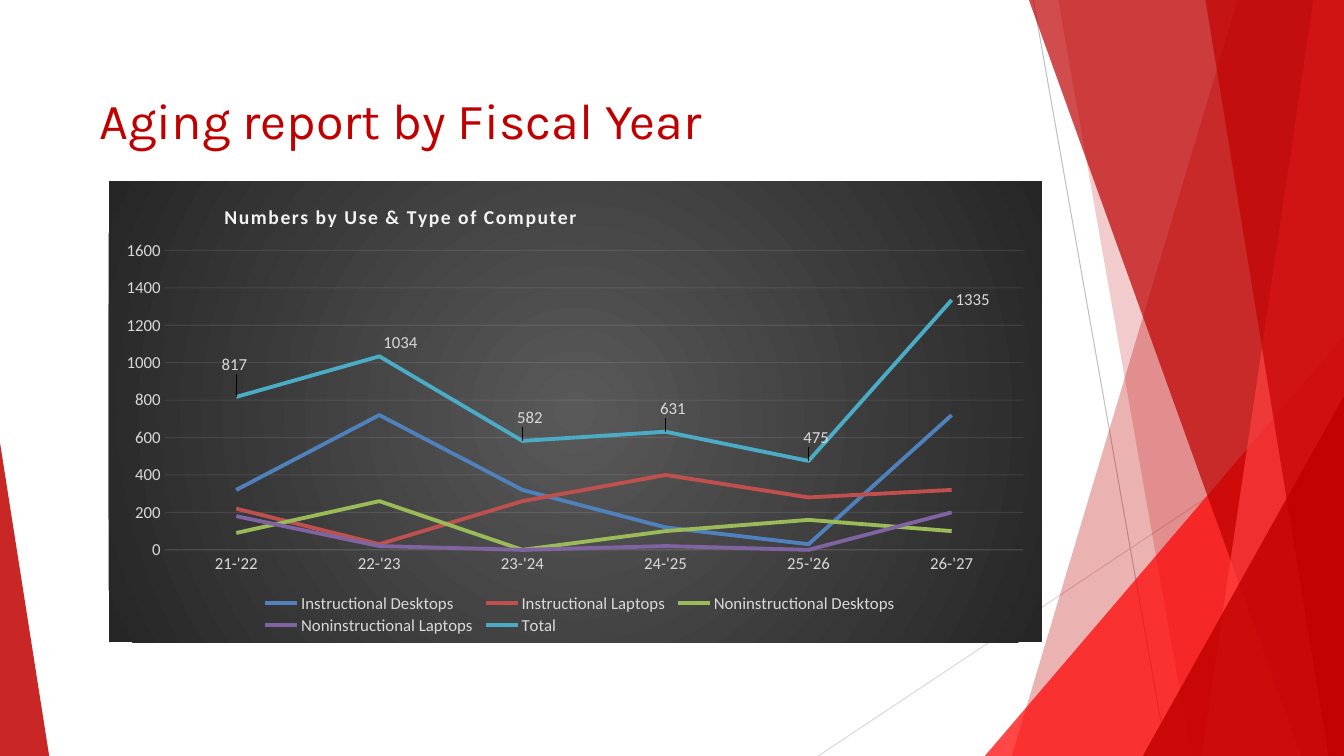
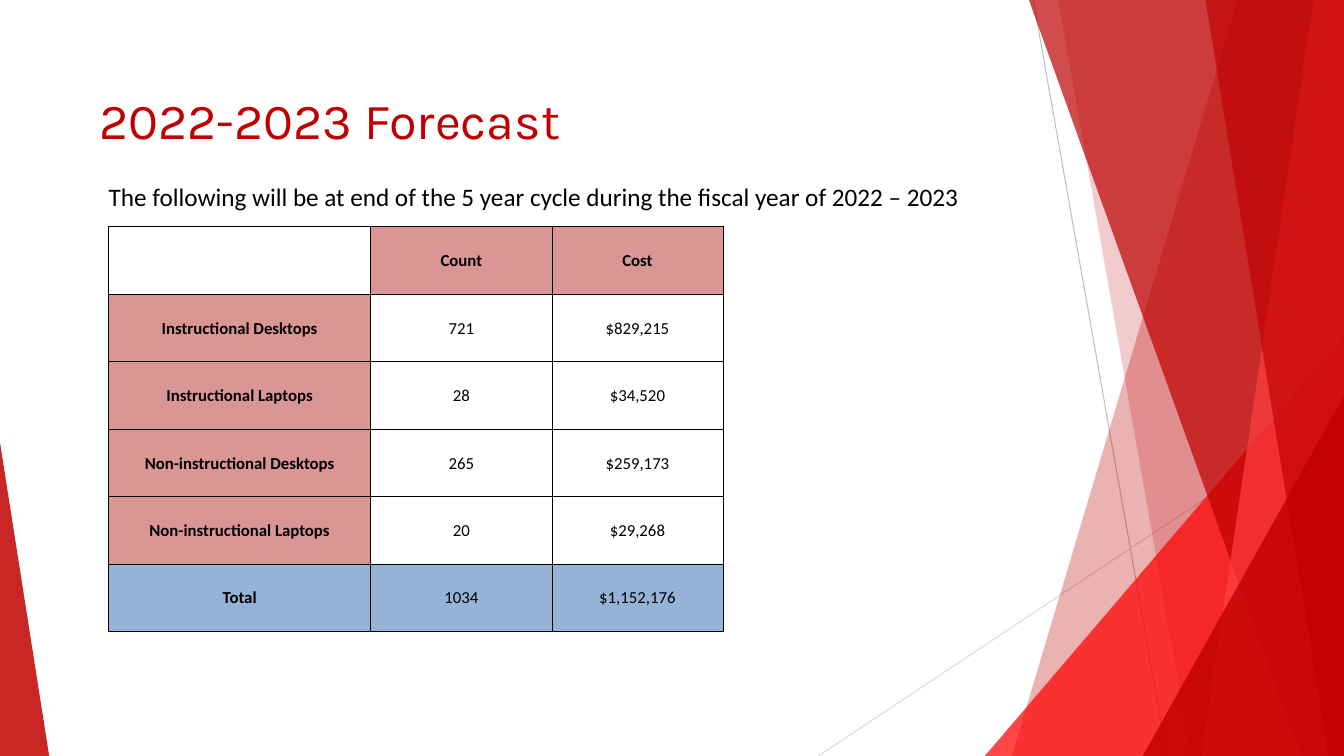
from dataclasses import dataclass

from lxml import etree
from pptx import Presentation
from pptx import util as u
from pptx.chart.data import CategoryChartData
from pptx.dml.color import RGBColor
from pptx.enum import chart as charts, text
from pptx.oxml import parse_xml
from pptx.oxml.ns import nsdecls, qn


@dataclass(frozen=True)
class Theme:
    red: str = "C00000"
    deep_red: str = "BE0000"
    bright_red: str = "FF0000"
    coral: str = "FF4040"
    rule_dark: str = "BEBEBE"
    rule_light: str = "D9D9D9"
    ink: str = "000000"
    header_fill: str = "D99694"
    total_fill: str = "95B3D7"
    chart_center: str = "595959"
    chart_edge: str = "262626"
    chart_text: str = "D9D9D9"
    chart_light: str = "F2F2F2"
    title_font: str = "Karla"
    body_font: str = "Calibri"
    title_size: int = 36
    body_size: int = 18
    chart_title_size: int = 14
    small_size: int = 12


theme = Theme()
WIDTH, HEIGHT = 33.87, 19.05


def set_font(font, color, size=theme.small_size, name=theme.body_font, bold=False):
    font.name = name
    font.size = u.Pt(size)
    font.bold = bold
    font.color.rgb = RGBColor.from_string(color)


def place(owner, index, values, edge=True):
    for old in owner.findall(qn("c:layout")):
        owner.remove(old)
    layout = parse_xml(f"<c:layout {nsdecls('c')}><c:manualLayout/></c:layout>")
    fields = {"xMode": "edge", "yMode": "edge"} if edge else {}
    if owner.tag == qn("c:plotArea"):
        fields = {"layoutTarget": "inner"} | fields
    fields |= dict(zip("xywh", values))
    for field, value in fields.items():
        etree.SubElement(layout[0], qn(f"c:{field}"), val=str(value))
    owner.insert(index, layout)


deck = Presentation()
deck.slide_width, deck.slide_height = u.Cm(WIDTH), u.Cm(HEIGHT)
blank = deck.slide_layouts[6]
chart_page, table_page = [deck.slides.add_slide(blank) for _ in range(2)]

rules = [
    (26.04, 0, 29.41, HEIGHT, theme.rule_dark),
    (WIDTH, 10.24, 20.62, HEIGHT, theme.rule_light),
]
corner = (WIDTH, HEIGHT)
bands = [
    ([(WIDTH, 0), (31.19, 0), (25.5, HEIGHT), corner], theme.red, 30),
    ([(WIDTH, 0), (26.67, 0), (30.02, HEIGHT), corner], theme.red, 20),
    ([(WIDTH, 8.46), (24.82, HEIGHT), corner], theme.bright_red, 72),
    ([(WIDTH, 0), (25.93, 0), (32.79, HEIGHT), corner], theme.deep_red, 70),
    ([(WIDTH, 0), (33.1, 0), (30.28, HEIGHT), corner], theme.coral, 70),
    ([(WIDTH, 0), (30.38, 0), (33.48, HEIGHT), corner], theme.red, 65),
    ([(WIDTH, 9.98), (28.8, HEIGHT), corner], theme.red, 80),
    ([(0, 11.15), (0, HEIGHT), (1.24, HEIGHT)], theme.red, 85),
]
backdrop = []
for x1, y1, x2, y2, color in rules:
    rule = chart_page.shapes.add_connector(1, u.Cm(x1), u.Cm(y1), u.Cm(x2), u.Cm(y2))
    rule.line.color.rgb = RGBColor.from_string(color)
    rule.line.width = u.Pt(0.72)
    etree.SubElement(rule.element.spPr, qn("a:effectLst"))
    backdrop.append(rule)
for points, color, opacity in bands:
    corners = [(u.Cm(x), u.Cm(y)) for x, y in points]
    builder = chart_page.shapes.build_freeform(*corners[0])
    builder.add_line_segments(corners[1:], close=True)
    band = builder.convert_to_shape()
    band.shadow.inherit = False
    band.line.fill.background()
    band.fill.solid()
    band.fill.fore_color.rgb = RGBColor.from_string(color)
    tint = band.element.spPr.find(".//" + qn("a:srgbClr"))
    etree.SubElement(tint, qn("a:alpha"), val=str(opacity * 1000))
    backdrop.append(band)
for shape in backdrop:
    blank.shapes.element.append(shape.element)

title_style = (2.51, 2.16, 28.83, 1.6, theme.red, theme.title_size, theme.title_font)
body_style = (2.74, 4.57, 23.47, 0.76, theme.ink, theme.body_size, theme.body_font)
texts = [
    (chart_page, "Aging report by Fiscal Year", title_style),
    (table_page, "2022-2023 Forecast", title_style),
    (
        table_page,
        "The following will be at end of the 5 year cycle during the fiscal year of 2022 – 2023",
        body_style,
    ),
]
for page, words, (left, top, width, height, color, size, name) in texts:
    box = page.shapes.add_textbox(u.Cm(left), u.Cm(top), u.Cm(width), u.Cm(height))
    frame = box.text_frame
    frame.word_wrap = True
    frame.vertical_anchor = text.MSO_ANCHOR.BOTTOM
    frame.margin_left = frame.margin_right = frame.margin_top = frame.margin_bottom = 0
    frame.text = words
    set_font(frame.paragraphs[0].font, color, size, name)

series_rows = [
    ("Instructional Desktops", (320, 720, 320, 120, 30, 720), "4F81BD"),
    ("Instructional Laptops", (220, 30, 260, 400, 280, 320), "C0504D"),
    ("Noninstructional Desktops", (90, 260, 0, 100, 160, 100), "9BBB59"),
    ("Noninstructional Laptops", (180, 20, 0, 20, 0, 200), "8064A2"),
    ("Total", (817, 1034, 582, 631, 475, 1335), "4BACC6"),
]
data = CategoryChartData(number_format="0")
data.categories = [f"{year}-'{year + 1}" for year in range(21, 27)]
for name, values, color in series_rows:
    data.add_series(name, values)
chart = chart_page.shapes.add_chart(
    charts.XL_CHART_TYPE.LINE, u.Cm(2.74), u.Cm(4.57), u.Cm(23.52), u.Cm(11.61), data
).chart
set_font(chart.font, theme.chart_text)
chart.plots[0].vary_by_categories = False
for series, (name, values, color) in zip(chart.plots[0].series, series_rows):
    series.smooth = False
    series.marker.style = charts.XL_MARKER_STYLE.NONE
    series.format.line.width = u.Pt(2.75)
    series.format.line.color.rgb = RGBColor.from_string(color)

total = chart.plots[0].series[4]
labels = total.data_labels
labels.show_value = True
labels.number_format = "0"
labels.number_format_is_linked = False
labels.position = charts.XL_LABEL_POSITION.RIGHT
set_font(labels.font, theme.chart_text)
label_shifts = [(-0.02, -0.07), (0, -0.03), (-0.01, -0.05), (-0.01, -0.05), (-0.01, -0.05)]
for index in range(len(label_shifts)):
    label = total.points[index].data_label
    label.position = charts.XL_LABEL_POSITION.RIGHT
    set_font(label.font, theme.chart_text)
for label, shift in zip(chart.element.xpath(".//c:dLbl"), label_shifts):
    place(label, 1, shift, edge=False)

category_axis, value_axis = chart.category_axis, chart.value_axis
value_axis.minimum_scale, value_axis.maximum_scale, value_axis.major_unit = 0, 1600, 200
value_axis.has_major_gridlines = True
value_axis.format.line.fill.background()
value_axis.tick_labels.number_format = "0"
value_axis.tick_labels.number_format_is_linked = False
for part in (category_axis, value_axis.major_gridlines):
    part.format.line.width = u.Pt(0.75)
    part.format.line.color.rgb = RGBColor.from_string(theme.chart_light)
for tint in chart.element.xpath(".//c:catAx/c:spPr//a:srgbClr | .//c:majorGridlines//a:srgbClr"):
    etree.SubElement(tint, qn("a:alpha"), val="10000")
for axis in (category_axis, value_axis):
    axis.major_tick_mark = axis.minor_tick_mark = charts.XL_TICK_MARK.NONE
    set_font(axis.tick_labels.font, theme.chart_text)

chart.has_title = True
span = chart.chart_title.text_frame.paragraphs[0].add_run()
span.text = "Numbers by Use & Type of Computer"
set_font(span.font, theme.chart_light, theme.chart_title_size, bold=True)
chart.element.xpath(".//c:title//a:rPr")[0].set("spc", "100")
chart.has_legend = True
chart.legend.position = charts.XL_LEGEND_POSITION.BOTTOM
chart.legend.include_in_layout = False
set_font(chart.legend.font, theme.chart_text)

plot_area = chart.element.xpath(".//c:plotArea")[0]
place(chart.element.xpath(".//c:title")[0], 1, (0.12, 0.04))
place(plot_area, 0, (0.06, 0.15, 0.92, 0.65))
place(chart.element.xpath(".//c:legend")[0], 1, (0.16, 0.89, 0.69, 0.1))
plot_area.append(parse_xml(f"<c:spPr {nsdecls('c', 'a')}><a:noFill/></c:spPr>"))
chart.element.xpath("c:chart")[0].addnext(parse_xml(
    f"<c:spPr {nsdecls('c', 'a')}><a:gradFill><a:gsLst>"
    f'<a:gs pos="0"><a:srgbClr val="{theme.chart_center}"/></a:gs>'
    f'<a:gs pos="100000"><a:srgbClr val="{theme.chart_edge}"/></a:gs></a:gsLst>'
    '<a:path path="circle"><a:fillToRect l="50000" t="50000" r="50000" b="50000"/></a:path>'
    "</a:gradFill><a:ln><a:noFill/></a:ln></c:spPr>"
))

forecast = [
    ("", "Count", "Cost"),
    ("Instructional Desktops", "721", "$829,215"),
    ("Instructional Laptops", "28", "$34,520"),
    ("Non-instructional Desktops", "265", "$259,173"),
    ("Non-instructional Laptops", "20", "$29,268"),
    ("Total", "1034", "$1,152,176"),
]
column_widths = (6.6, 4.57, 4.31)
row_height = 1.7
table = table_page.shapes.add_table(
    len(forecast), len(column_widths), u.Cm(2.74), u.Cm(5.71),
    u.Cm(sum(column_widths)), u.Cm(row_height * len(forecast)),
).table
table.first_row = table.horz_banding = False
for column, width in zip(table.columns, column_widths):
    column.width = u.Cm(width)
for row_index, row in enumerate(forecast):
    table.rows[row_index].height = u.Cm(row_height)
    for column_index, words in enumerate(row):
        cell = table.cell(row_index, column_index)
        heading = row_index == 0 or column_index == 0
        cell.text = words
        cell.vertical_anchor = text.MSO_ANCHOR.MIDDLE
        cell.margin_left = cell.margin_right = cell.margin_top = u.Cm(0.03)
        cell.margin_bottom = 0
        para = cell.text_frame.paragraphs[0]
        para.alignment = text.PP_ALIGN.CENTER
        set_font(para.font, theme.ink, bold=heading)
        for side in "LRTB":
            cell.fill.background()
            border = parse_xml(
                f'<a:ln{side} {nsdecls("a")} w="6350"><a:solidFill>'
                f'<a:srgbClr val="{theme.ink}"/></a:solidFill></a:ln{side}>'
            )
            cell.fill._xPr.find(qn("a:noFill")).addprevious(border)
        if row_index == len(forecast) - 1 or (heading and words):
            color = theme.header_fill if row_index < len(forecast) - 1 else theme.total_fill
            cell.fill.solid()
            cell.fill.fore_color.rgb = RGBColor.from_string(color)

deck.save("out.pptx")
